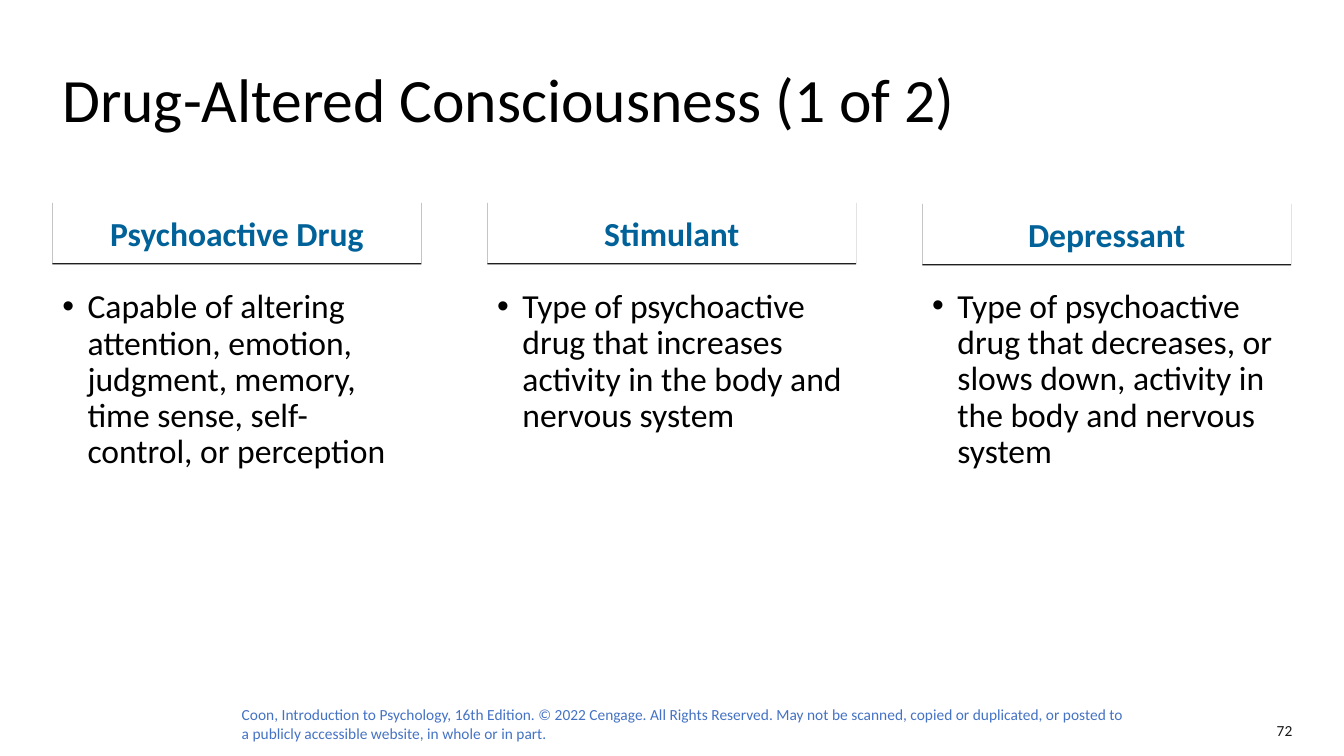
from lxml import etree
from pptx import Presentation
from pptx.dml.color import RGBColor
from pptx.enum.shapes import MSO_SHAPE
from pptx.enum.text import MSO_ANCHOR, PP_ALIGN
from pptx.oxml import parse_xml
from pptx.oxml.ns import nsdecls, qn
from pptx.util import Pt

RECT = MSO_SHAPE.RECTANGLE
TOP, MIDDLE, BOTTOM = MSO_ANCHOR.TOP, MSO_ANCHOR.MIDDLE, MSO_ANCHOR.BOTTOM
LEFT, CENTER, RIGHT = PP_ALIGN.LEFT, PP_ALIGN.CENTER, PP_ALIGN.RIGHT

BLACK = RGBColor(0x00, 0x00, 0x00)
WHITE = RGBColor(0xFF, 0xFF, 0xFF)
TEAL = RGBColor(0x00, 0x62, 0x98)
BLUE = RGBColor(0x44, 0x72, 0xC4)
DARK = RGBColor(0x18, 0x17, 0x17)

FONT = "Calibri"
MARGIN = 37.44
CONTENT_W = 884.88
COLUMN_W = 263.52
HEADER_H = 43.92

TITLE = "Drug-Altered Consciousness (1 of 2)"
COPYRIGHT = (
    "Coon, Introduction to Psychology, 16th Edition. © 2022 Cengage. "
    "All Rights Reserved. May not be scanned, copied or duplicated, or "
    "posted to a publicly accessible website, in whole or in part."
)
# Heading, definition, top of heading, top of definition
COLUMNS = [
    ("Psychoactive Drug",
     "Capable of altering attention, emotion, judgment, memory, "
     "time sense, self-control, or perception", 144, 203.5),
    ("Stimulant",
     "Type of psychoactive drug that increases activity in the body "
     "and nervous system", 144, 203.3),
    ("Depressant",
     "Type of psychoactive drug that decreases, or slows down, activity "
     "in the body and nervous system", 144.72, 203.04),
]


def set_text(sp, text, size, color, align=LEFT, anchor=TOP, bold=False):
    tf = sp.text_frame
    tf.word_wrap = True
    tf.vertical_anchor = anchor
    tf.text = text
    p = tf.paragraphs[0]
    p.alignment = align
    font = p.runs[0].font
    font.name, font.size, font.bold = FONT, Pt(size), bold
    font.color.rgb = color
    return p


def add_text(slide, box, text, size, color, **style):
    sp = slide.shapes.add_textbox(*map(Pt, box))
    return set_text(sp, text, size, color, **style)


def add_header(slide, box, text):
    sp = slide.shapes.add_shape(RECT, *map(Pt, box))
    sp.fill.solid()
    sp.fill.fore_color.rgb = WHITE
    sp.line.fill.background()
    tf = sp.text_frame
    tf.margin_left = tf.margin_right = Pt(7.2)
    tf.margin_top = tf.margin_bottom = Pt(7.2)
    set_text(sp, text, 24, TEAL, align=CENTER, anchor=BOTTOM, bold=True)

    # Hard shadow one point below, which underlines the heading
    sp.shadow.inherit = False
    effects = sp._element.spPr.find(qn("a:effectLst"))
    effects.append(parse_xml(
        f'<a:outerShdw {nsdecls("a")} blurRad="0" dist="{Pt(1)}" '
        f'dir="5400000" algn="t" rotWithShape="0">'
        f'<a:srgbClr val="{BLACK}"/></a:outerShdw>'))


def add_definition(slide, box, text):
    p = add_text(slide, box, text, 24, BLACK)
    p.line_spacing = 0.9
    p.space_after = Pt(8)
    pPr = p._p.get_or_add_pPr()
    pPr.set("marL", str(Pt(18)))
    pPr.set("indent", str(Pt(-18)))
    etree.SubElement(pPr, qn("a:buFont")).set("typeface", "Arial")
    etree.SubElement(pPr, qn("a:buChar")).set("char", "•")


def add_columns(slide, left, width):
    pitch = (width - COLUMN_W) / (len(COLUMNS) - 1)
    for i, (heading, definition, head_top, text_top) in enumerate(COLUMNS):
        x = left + i * pitch
        add_header(slide, (x, head_top, COLUMN_W, HEADER_H), heading)
        add_definition(slide, (x, text_top, COLUMN_W, 282.96), definition)


def add_title(slide, box):
    p = add_text(slide, box, TITLE, 44, BLACK, anchor=MIDDLE)
    p.line_spacing = 0.9


def add_footer(slide, top):
    add_text(slide, (165.6, top, 652.32, 47.52), COPYRIGHT, 11, BLUE)
    add_text(slide, (872.64, top + 7.2, 57.6, 28.8), "72", 11, DARK,
             align=RIGHT, anchor=MIDDLE)


def main():
    prs = Presentation()
    prs.slide_width, prs.slide_height = Pt(960), Pt(540)
    slide = prs.slides.add_slide(prs.slide_layouts[6])
    add_footer(slide, 500.4)
    add_title(slide, (MARGIN, 37.44, CONTENT_W, 71.28))
    add_columns(slide, MARGIN, CONTENT_W)
    prs.save("out.pptx")


if __name__ == "__main__":
    main()
